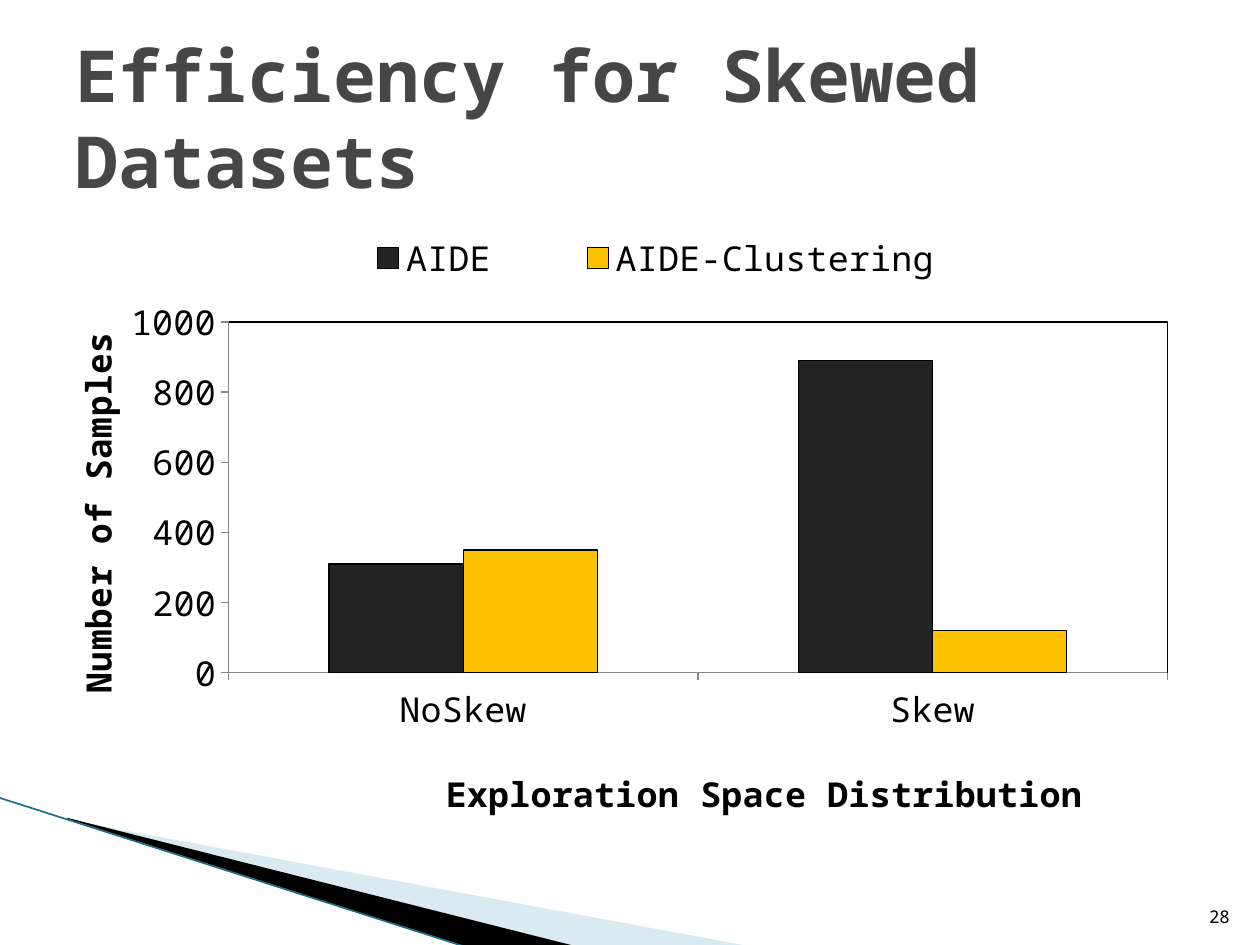
from lxml import etree
from pptx import Presentation, util as u
from pptx.chart.data import CategoryChartData
from pptx.dml.color import RGBColor
from pptx.enum import chart as ch, shapes, text
from pptx.oxml import parse_xml
from pptx.oxml.ns import nsdecls, qn

WIDE, HIGH = u.Inches(10), u.Inches(7.5)
FONT = "Noto Sans Mono"
BLACK = RGBColor(0, 0, 0)
GREY = RGBColor(0x46, 0x46, 0x46)
AXIS = RGBColor(0x86, 0x86, 0x86)
PALE = RGBColor(0xA0, 0xCB, 0xDC)
EDGE = RGBColor(0x1A, 0x6F, 0x85)
DARK = RGBColor(0x23, 0x23, 0x23)
GOLD = RGBColor(0xFF, 0xC0, 0x00)
CATS = ("NoSkew", "Skew")
DATA = (("AIDE", (310, 890), DARK), ("AIDE-Clustering", (350, 120), GOLD))


def style(font, size, color, bold=False):
    """Set the face, size, colour and weight of a font."""
    font.name, font.size, font.bold = FONT, u.Pt(size), bold
    font.color.rgb = color


def wedge(slide, points, color, alpha=None):
    """Draw a filled outline through points given in inches."""
    spots = [(u.Inches(x), u.Inches(y)) for x, y in points]
    pen = slide.shapes.build_freeform(*spots[0])
    pen.add_line_segments(spots[1:], close=True)
    shape = pen.convert_to_shape()
    shape.shadow.inherit = False
    shape.line.fill.background()
    shape.fill.solid()
    shape.fill.fore_color.rgb = color
    if alpha:
        tint = shape._element.spPr.find(".//" + qn("a:srgbClr"))
        etree.SubElement(tint, qn("a:alpha")).set("val", str(alpha * 1000))


def corner(slide):
    """Draw the swoosh in the lower left corner."""
    wedge(slide, [(0.55, 6.51), (5.95, 7.51), (4.56, 7.51), (0.55, 6.5)], PALE, 40)
    wedge(slide, [(0.53, 6.49), (4.57, 7.51), (3.72, 7.52), (0.54, 6.5)], BLACK)
    ends = [u.Inches(n) for n in (-0.01, 6.33, 3.71, 7.52)]
    line = slide.shapes.add_connector(shapes.MSO_CONNECTOR.STRAIGHT, *ends)
    line.line.color.rgb, line.line.width = EDGE, u.Pt(0.95)
    etree.SubElement(line._element.spPr, qn("a:effectLst"))


def head(slide, box):
    """Fill and place the title."""
    title = slide.shapes.title
    title.left, title.top, title.width, title.height = box
    frame = title.text_frame
    frame.text = "Efficiency for Skewed Datasets"
    frame.word_wrap = True
    frame.vertical_anchor = text.MSO_ANCHOR.MIDDLE
    para = frame.paragraphs[0]
    para.alignment = text.PP_ALIGN.LEFT
    style(para.font, 41, GREY, True)


def page(slide, box):
    """Place the page number."""
    frame = slide.shapes.add_textbox(*box).text_frame
    frame.word_wrap = True
    frame.vertical_anchor = text.MSO_ANCHOR.BOTTOM
    para = frame.paragraphs[0]
    para.text = "28"
    para.alignment = text.PP_ALIGN.RIGHT
    style(para.font, 10, BLACK)


def pin(part, index, inner=False, **spots):
    """Fix a chart part at percentages of the chart's size."""
    for old in part.findall(qn("c:layout")):
        part.remove(old)
    tags = '<c:layoutTarget val="inner"/>' if inner else ""
    tags += "".join(f'<c:{k}Mode val="edge"/>' for k in "xy")
    tags += "".join(f'<c:{k} val="{v / 100}"/>' for k, v in spots.items())
    part.insert(index, parse_xml(
        f'<c:layout {nsdecls("c")}><c:manualLayout>{tags}</c:manualLayout></c:layout>'))


def name(axis, label, x, y):
    """Title an axis and draw its line and ticks."""
    axis.has_major_gridlines = False
    axis.major_tick_mark = ch.XL_TICK_MARK.OUTSIDE
    axis.format.line.color.rgb = AXIS
    frame = axis.axis_title.text_frame
    frame.text = label
    style(frame.paragraphs[0].font, 20, BLACK, True)
    pin(axis.axis_title._element, 1, x=x, y=y)


def bars(slide, box):
    """Build the clustered column chart."""
    data = CategoryChartData()
    data.categories = CATS
    for label, vals, _ in DATA:
        data.add_series(label, vals)
    kind = ch.XL_CHART_TYPE.COLUMN_CLUSTERED
    chart = slide.shapes.add_chart(kind, *box, data).chart
    style(chart.font, 20, BLACK)
    chart.has_title = False
    chart.has_legend = True
    chart.legend.position = ch.XL_LEGEND_POSITION.TOP
    chart.legend.include_in_layout = False
    pin(chart.legend._element, 1, x=20.3, y=3.8, w=64, h=10)
    plot = chart.plots[0]
    plot.gap_width, plot.overlap, plot.vary_by_categories = 150, 0, False
    for row, (_, _, color) in zip(plot.series, DATA):
        row.format.fill.solid()
        row.format.fill.fore_color.rgb = color
        row.format.line.color.rgb = BLACK
        row.format.line.width = u.Pt(0.75)
    name(chart.category_axis, "Exploration Space Distribution", 33.2, 90.8)
    axis = chart.value_axis
    name(axis, "Number of Samples", 0, 21)
    axis.minimum_scale, axis.maximum_scale, axis.major_unit = 0, 1000, 200
    area = chart._chartSpace.chart.plotArea
    pin(area, 0, True, x=14.6, y=19.3, w=82.8, h=57.3)
    area.append(parse_xml(
        f'<c:spPr {nsdecls("c", "a")}><a:noFill/><a:ln w="9525"><a:solidFill>'
        f'<a:srgbClr val="{BLACK}"/></a:solidFill></a:ln></c:spPr>'))


def share(x, y, w, h):
    """Turn percentages of the slide into a box."""
    return [round(n * full / 100) for n, full in zip((x, y, w, h), (WIDE, HIGH) * 2)]


def main():
    """Build and save the slide."""
    deck = Presentation()
    deck.slide_width, deck.slide_height = WIDE, HIGH
    slide = deck.slides.add_slide(deck.slide_layouts[5])
    corner(slide)
    head(slide, share(5, 4, 90, 16.67))
    page(slide, share(94.6, 93.47, 4, 5.33))
    bars(slide, share(5, 21.6, 90, 66))
    deck.save("out.pptx")


if __name__ == "__main__":
    main()
